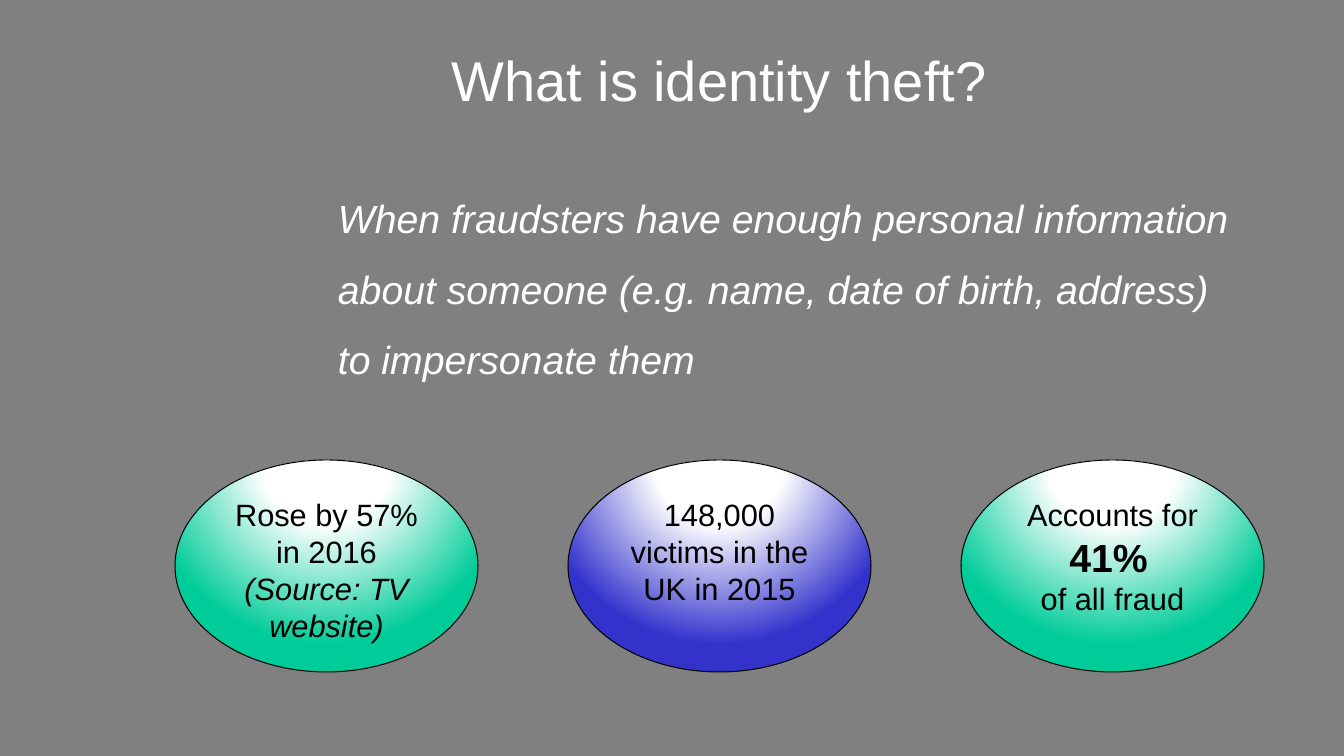
from pptx import Presentation
from pptx import util as u
from pptx.dml.color import RGBColor
from pptx.enum import shapes, text
from pptx.oxml import parse_xml
from pptx.oxml.ns import nsdecls, qn

SCALE = 914400 / 100.8
WHITE, BLACK, GREY, GREEN, BLUE = "FFFFFF", "000000", "808080", "00CC99", "3333CC"


def px(length):
    return u.Emu(round(length * SCALE))


def colour(code):
    return RGBColor.from_string(code)


class FraudPage:
    """Holds the font style and the current slide, and draws its elements."""

    font_name = "Arial"

    def __init__(self, deck, background):
        self.page = deck.slides.add_slide(deck.slide_layouts[6])
        self.page.background.fill.solid()
        self.page.background.fill.fore_color.rgb = colour(background)

    def fill_text(self, shape, paragraphs, ink, inset, anchor, para_format):
        frame = shape.text_frame
        frame_format = {"margin_left": px(inset[0]), "margin_right": px(inset[0]),
                        "margin_top": px(inset[1]), "margin_bottom": px(inset[1]),
                        "vertical_anchor": anchor, "word_wrap": True}
        for name, value in frame_format.items():
            setattr(frame, name, value)
        for index, spans in enumerate(paragraphs):
            para = frame.add_paragraph() if index else frame.paragraphs[0]
            for name, value in para_format.items():
                setattr(para, name, value)
            for words, size, style in spans:
                span = para.add_run()
                span.text = words
                span.font.color.rgb = colour(ink)
                values = {"name": self.font_name, "size": u.Pt(size), **style}
                for name, value in values.items():
                    setattr(span.font, name, value)

    def label(self, left, top, width, height, words, size, style, anchor, para_format):
        box = self.page.shapes.add_textbox(px(left), px(top), px(width), px(height))
        self.fill_text(box, [[(words, size, style)]], WHITE, (11, 6), anchor, para_format)

    def bubble(self, left, top, width, height, shade, paragraphs):
        oval = self.page.shapes.add_shape(
            shapes.MSO_SHAPE.OVAL, px(left), px(top), px(width), px(height))
        oval.shadow.inherit = False
        self.glow(oval, shade)
        oval.line.color.rgb = colour(BLACK)
        oval.line.width = u.Pt(0.75)
        self.fill_text(oval, paragraphs, BLACK, (10, 5), text.MSO_ANCHOR.TOP,
                       {"alignment": text.PP_ALIGN.CENTER})

    def glow(self, shape, shade):
        shape.fill.gradient()
        properties = shape.element.spPr
        stops = "".join(
            f'<a:gs pos="{place * 1000}"><a:srgbClr val="{code}"/></a:gs>'
            for place, code in ((0, WHITE), (35, WHITE), (100, shade)))
        gradient = parse_xml(
            f'<a:gradFill {nsdecls("a")} rotWithShape="1"><a:gsLst>{stops}</a:gsLst>'
            '<a:path path="circle">'
            '<a:fillToRect l="50000" t="-80000" r="50000" b="180000"/>'
            '</a:path></a:gradFill>')
        properties.replace(properties.find(qn("a:gradFill")), gradient)


def main():
    deck = Presentation()
    deck.slide_width, deck.slide_height = px(1344), px(756)
    slide = FraudPage(deck, GREY)

    slide.label(437, 39, 564, 81, "What is identity theft?", 40, {},
                text.MSO_ANCHOR.MIDDLE, {"alignment": text.PP_ALIGN.CENTER})
    slide.label(327, 165, 916, 224,
                "When fraudsters have enough personal information about someone "
                "(e.g. name, date of birth, address) to impersonate them",
                28, {"italic": True}, text.MSO_ANCHOR.TOP, {"line_spacing": 1.5})

    facts = [
        (GREEN, [[("Rose by 57% in 2016", 22, {})],
                 [("(Source: TV website)", 22, {"italic": True})]]),
        (BLUE, [[("148,000 victims in the UK in 2015", 22, {})]]),
        (GREEN, [[("Accounts for ", 22, {}), ("41%", 28, {"bold": True}), (" ", 20, {})],
                 [("of all fraud", 22, {})]]),
    ]
    for column, (shade, paragraphs) in enumerate(facts):
        slide.bubble(175 + 393 * column, 460, 303, 212, shade, paragraphs)

    deck.save("out.pptx")


if __name__ == "__main__":
    main()
